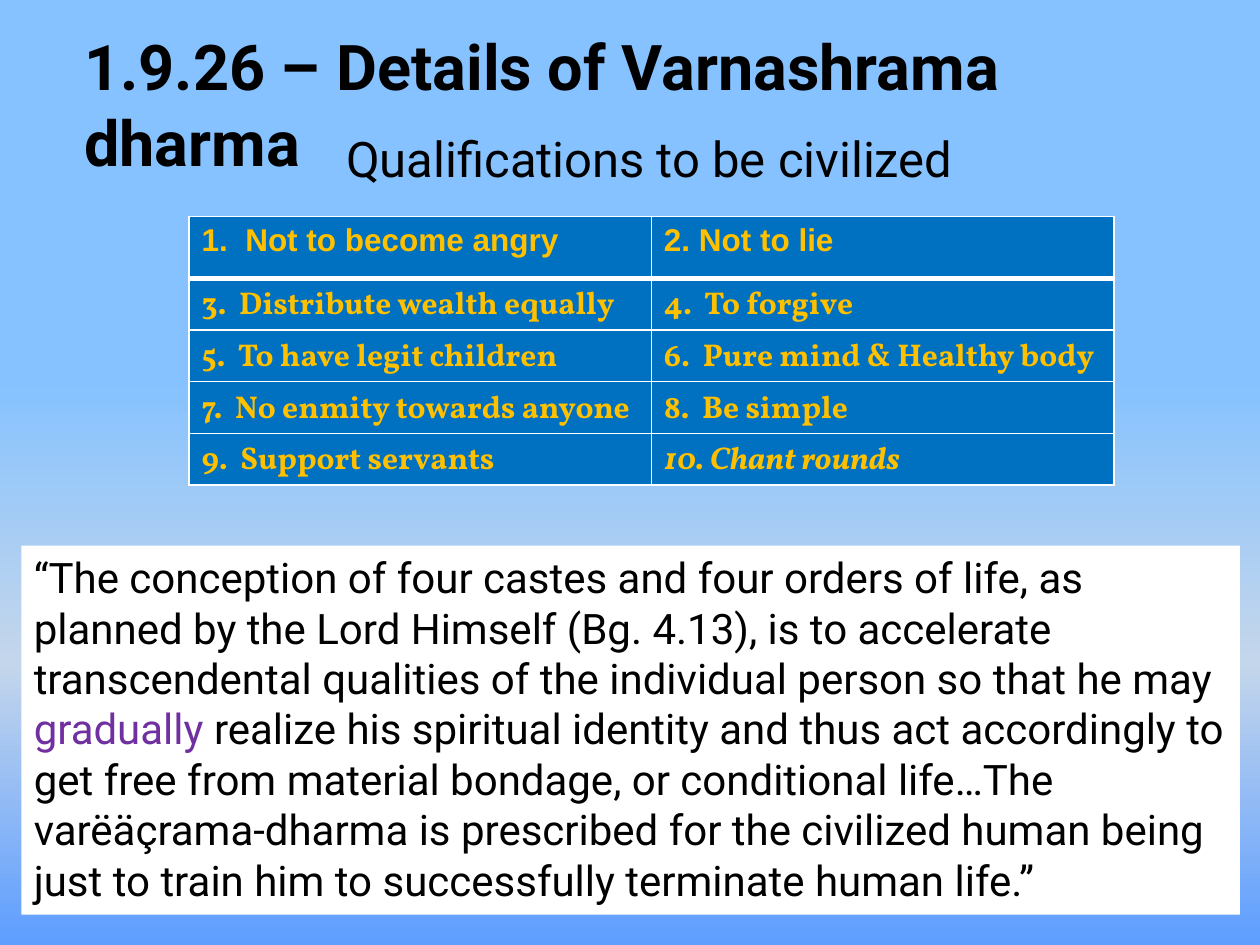
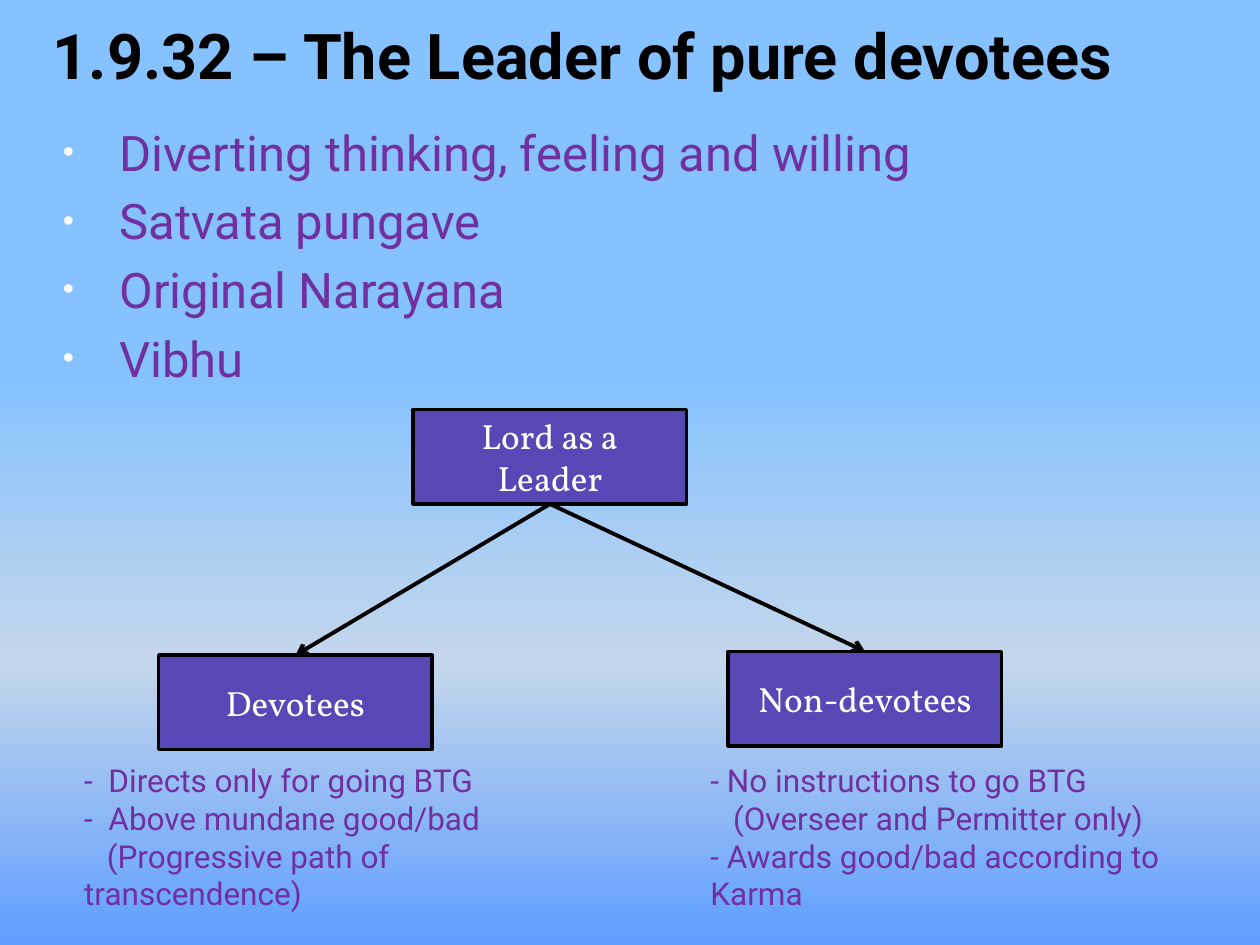
from lxml import etree
from pptx import Presentation
from pptx import util as u
from pptx.dml.color import RGBColor
from pptx.enum import shapes, text
from pptx.oxml import parse_xml
from pptx.oxml.ns import nsdecls, qn

COLORS = {
    "black": "000000", "white": "FFFFFF", "purple": "7030A0", "gold": "FFC000",
    "cell": "0070C0", "box": "5848B6", "bullet": "F9F9F9",
}
BACKGROUND_STOPS = [(40, "85C2FF"), (70, "C4D6EB"), (100, "5E9EFF")]
TITLE = {"name": "Roboto", "size": u.Pt(36), "bold": True}
LARGE = {"name": "Roboto", "size": u.Pt(28)}
QUOTE = {"name": "Roboto", "size": u.Pt(24)}
NOTE = {"name": "Roboto", "size": u.Pt(18)}
BOX = {"name": "Vollkorn", "size": u.Pt(20)}


def add_run(paragraph, words, font_format, color):
    run = paragraph.add_run()
    run.text = words
    for name, value in font_format.items():
        setattr(run.font, name, value)
    run.font.color.rgb = RGBColor.from_string(COLORS[color])


def add_text(slide, place, lines, font_format, color, margin=0.15, first_line=0):
    """Add a wrapping text box and return its paragraphs, one for each line."""
    frame = slide.shapes.add_textbox(*map(u.Inches, place)).text_frame
    frame.word_wrap = True
    for index, line in enumerate(lines):
        paragraph = frame.add_paragraph() if index else frame.paragraphs[0]
        properties = paragraph._p.get_or_add_pPr()
        properties.set("marL", str(u.Inches(margin)))
        properties.set("indent", str(u.Inches(first_line)))
        add_run(paragraph, line, font_format, color)
    return frame.paragraphs


presentation = Presentation()
presentation.slide_width = u.Inches(10)
presentation.slide_height = u.Inches(7.5)

titles = [
    ("1.9.26 – Details of Varnashrama dharma", (0.42, 0.17, 9.42, 0.67)),
    ("1.9.32 – The Leader of pure devotees", (0.17, 0.08, 9.67, 0.67)),
]
for title, place in titles:
    slide = presentation.slides.add_slide(presentation.slide_layouts[6])
    fill = slide.background.fill
    fill.gradient()
    fill.gradient_angle = 270
    stops = next(slide.background._cSld.iter(qn("a:gsLst")))
    for stop in list(stops):
        stops.remove(stop)
    for position, color in BACKGROUND_STOPS:
        stop = etree.SubElement(stops, qn("a:gs"), pos=str(position * 1000))
        etree.SubElement(stop, qn("a:srgbClr"), val=color)
    add_text(slide, place, [title], TITLE, "black")
qualities_slide, leader_slide = presentation.slides

# Slide 1: qualifications table and quotation
add_text(qualities_slide, (2.5, 0.97, 5.17, 0.67),
         ["Qualifications to be civilized"], LARGE, "black")

qualities = [
    ("1.  Not to become angry", "2. Not to lie"),
    ("3.  Distribute wealth equally", "4.  To forgive"),
    ("5.  To have legit children", "6.  Pure mind & Healthy body"),
    ("7.  No enmity towards anyone", "8.  Be simple"),
    ("9.  Support servants", "10. Chant rounds"),
]
table = qualities_slide.shapes.add_table(
    len(qualities), 2, *map(u.Inches, (1.5, 1.72, 7.34, 2.13))).table
for row, pair in enumerate(qualities):
    table.rows[row].height = u.Inches(0.41 if row else 0.49)
    for column, words in enumerate(pair):
        cell = table.cell(row, column)
        cell_format = {"name": "Vollkorn" if row else "Arial", "size": u.Pt(18),
                       "bold": True, "italic": words == "10. Chant rounds"}
        add_run(cell.text_frame.paragraphs[0], words, cell_format, "gold")
        widths = {"L": 1, "R": 1, "T": 3 if row == 1 else 1, "B": 1 if row else 3}
        for side, points in widths.items():
            cell._tc.get_or_add_tcPr().append(parse_xml(
                f'<a:ln{side} {nsdecls("a")} w="{u.Pt(points)}"><a:solidFill>'
                f'<a:srgbClr val="{COLORS["white"]}"/></a:solidFill></a:ln{side}>'))
        cell.fill.solid()
        cell.fill.fore_color.rgb = RGBColor.from_string(COLORS["cell"])

quote = qualities_slide.shapes.add_shape(
    shapes.MSO_SHAPE.RECTANGLE, *map(u.Inches, (0.17, 4.33, 9.67, 2.93)))
quote.shadow.inherit = False
quote.fill.solid()
quote.fill.fore_color.rgb = RGBColor.from_string(COLORS["white"])
quote.line.fill.background()
quote.text_frame.word_wrap = True
quote.text_frame.vertical_anchor = text.MSO_ANCHOR.TOP
paragraph = quote.text_frame.paragraphs[0]
paragraph.alignment = text.PP_ALIGN.LEFT
for words, color in [
    ("“The conception of four castes and four orders of life, as planned by the Lord "
     "Himself (Bg. 4.13), is to accelerate transcendental qualities of the individual "
     "person so that he may ", "black"),
    ("gradually", "purple"),
    (" realize his spiritual identity and thus act accordingly to get free from material "
     "bondage, or conditional life…The varëäçrama-dharma is prescribed for the civilized "
     "human being just to train him to successfully terminate human life.”", "black"),
]:
    add_run(paragraph, words, QUOTE, color)

# Slide 2: bullets and the leader tree
bullets = add_text(
    leader_slide, (0.25, 0.92, 9.5, 2.17),
    ["Diverting thinking, feeling and willing", "Satvata pungave",
     "Original Narayana", "Vibhu"],
    LARGE, "purple", margin=0.6, first_line=-0.45)
for index, paragraph in enumerate(bullets):
    if index:
        paragraph.space_before = u.Pt(5.6)
    properties = paragraph._p.get_or_add_pPr()
    bullet_color = etree.SubElement(properties, qn("a:buClr"))
    etree.SubElement(bullet_color, qn("a:srgbClr"), val=COLORS["bullet"])
    etree.SubElement(properties, qn("a:buSzPct"), val="65000")
    etree.SubElement(properties, qn("a:buFont"), typeface="Arial")
    etree.SubElement(properties, qn("a:buChar"), char="•")

boxes = []
for words, left, top in [("Lord as a Leader", 3.28, 3.25),
                         ("Devotees", 1.26, 5.2), ("Non-devotees", 5.78, 5.17)]:
    box = leader_slide.shapes.add_shape(
        shapes.MSO_SHAPE.RECTANGLE, *map(u.Inches, (left, top, 2.17, 0.75)))
    box.shadow.inherit = False
    box.fill.solid()
    box.fill.fore_color.rgb = RGBColor.from_string(COLORS["box"])
    box.line.color.rgb = RGBColor.from_string(COLORS["black"])
    box.line.width = u.Pt(2)
    frame = box.text_frame
    for name, value in {"word_wrap": True, "vertical_anchor": text.MSO_ANCHOR.MIDDLE,
                        "margin_left": u.Inches(0.12),
                        "margin_right": u.Inches(0.12)}.items():
        setattr(frame, name, value)
    frame.paragraphs[0].alignment = text.PP_ALIGN.CENTER
    add_run(frame.paragraphs[0], words, BOX, "white")
    boxes.append(box)

leader, *followers = boxes
for follower in followers:
    arrow = leader_slide.shapes.add_connector(shapes.MSO_CONNECTOR.STRAIGHT, 0, 0, 0, 0)
    arrow.begin_connect(leader, 2)
    arrow.end_connect(follower, 0)
    arrow.line.color.rgb = RGBColor.from_string(COLORS["black"])
    arrow.line.width = u.Pt(2.25)
    etree.SubElement(arrow.line._get_or_add_ln(), qn("a:tailEnd"), type="arrow")
    etree.SubElement(arrow._element.spPr, qn("a:effectLst"))

notes = [
    ((0.42, 5.99, 4.3, 1.01),
     ["-  Directs only for going BTG", "-  Above mundane good/bad",
      "(Progressive path of transcendence)"]),
    ((5.39, 5.99, 4.44, 1.01),
     ["- No instructions to go BTG", "(Overseer and Permitter only)",
      "- Awards good/bad according to Karma"]),
]
for place, lines in notes:
    for paragraph in add_text(leader_slide, place, lines, NOTE, "purple"):
        if paragraph.text.startswith("("):
            paragraph._p.get_or_add_pPr().set("indent", str(u.Inches(0.18)))

presentation.save("out.pptx")
